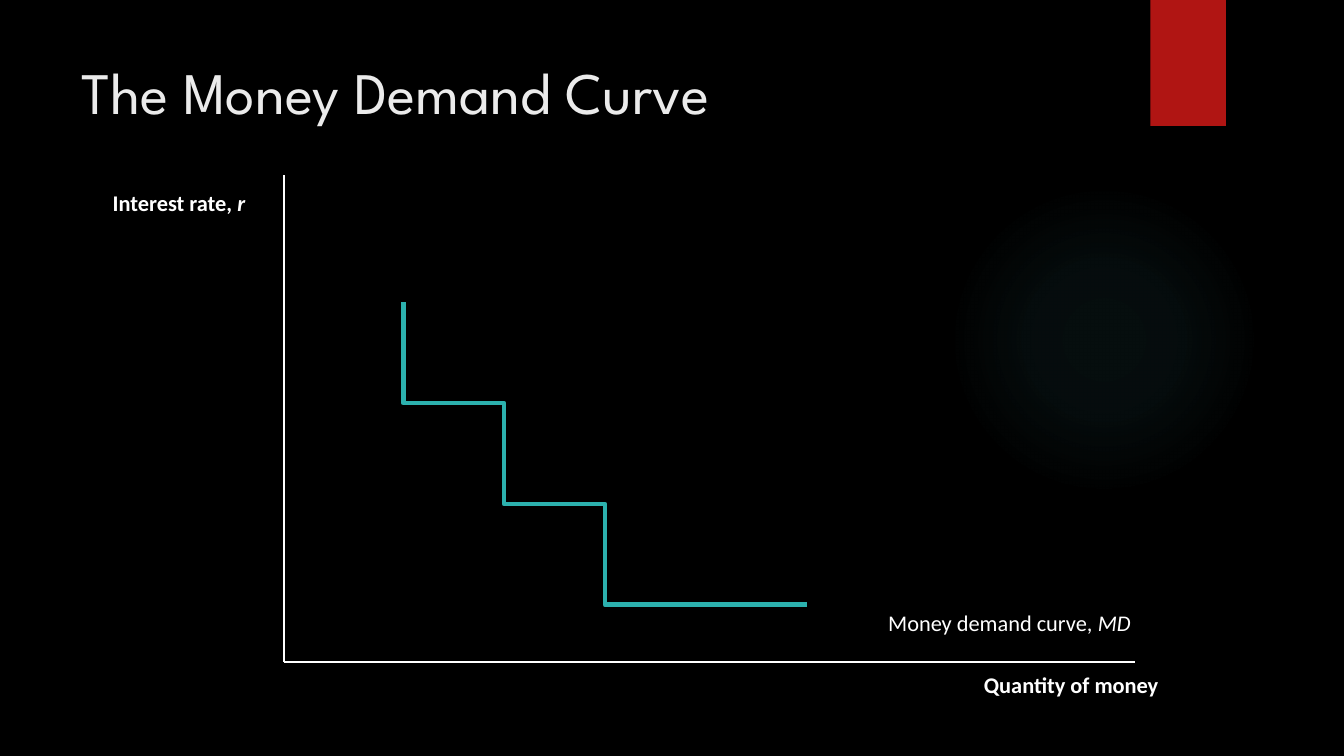
from dataclasses import dataclass

from lxml import etree
from pptx import Presentation
from pptx.dml.color import RGBColor
from pptx.enum.shapes import MSO_CONNECTOR, MSO_SHAPE
from pptx.enum.text import MSO_ANCHOR, PP_ALIGN
from pptx.oxml import parse_xml
from pptx.oxml.ns import nsdecls, qn
from pptx.slide import Slide
from pptx.util import Inches, Pt

LEFT, MID, RIGHT = PP_ALIGN.LEFT, PP_ALIGN.CENTER, PP_ALIGN.RIGHT
TOP = MSO_ANCHOR.TOP
LINE = MSO_CONNECTOR.STRAIGHT
OVAL, RECT = MSO_SHAPE.OVAL, MSO_SHAPE.RECTANGLE

BLACK = RGBColor(0x00, 0x00, 0x00)
WHITE = RGBColor(0xFF, 0xFF, 0xFF)
PALE = RGBColor(0xEB, 0xEB, 0xEB)
RED = RGBColor(0xB0, 0x15, 0x13)
TEAL = RGBColor(0x2C, 0xB1, 0xAE)
GLOW = RGBColor(0x50, 0xB9, 0xC1)

Point = tuple[float, float]


@dataclass
class Label:
    box: tuple[float, float, float, float]
    plain: str
    slant: str
    bold: bool
    align: PP_ALIGN


# Graph data, in inches
ORIGIN: Point = (2.82, 6.57)
AXIS_ENDS: list[Point] = [(2.82, 1.74), (11.26, 6.57)]
CURVE: list[Point] = [(8.31, 6.1), (6.17, 6.13), (4.26, 4.74), (3.63, 2.67)]
STEPS = 60
LABELS = [
    Label((0.79, 1.88, 1.97, 0.27), "Interest rate,", " r", True, MID),
    Label((8.71, 6.66, 2.78, 0.27), "Quantity of money", "", True, RIGHT),
    Label((8.81, 6.04, 2.44, 0.27), "Money demand curve, ", "MD", False, LEFT),
]


def add_glow(slide: Slide) -> None:
    """Draw a faint disc that fades out towards its rim."""
    disc = slide.shapes.add_shape(
        OVAL, Inches(9.41), Inches(1.83), Inches(3.08), Inches(3.08))
    disc.shadow.inherit = False
    disc.line.fill.background()
    stops = "".join(
        f'<a:gs pos="{pos}000"><a:srgbClr val="{GLOW}">'
        f'<a:alpha val="{alpha}000"/></a:srgbClr></a:gs>'
        for pos, alpha in [(0, 7), (36, 6), (69, 0)])
    fade = parse_xml(
        f'<a:gradFill {nsdecls("a")}><a:gsLst>{stops}</a:gsLst>'
        '<a:path path="circle"><a:fillToRect l="50000" t="50000" '
        'r="50000" b="50000"/></a:path></a:gradFill>')
    disc.element.spPr.find(qn("a:prstGeom")).addnext(fade)


def add_tab(slide: Slide) -> None:
    tab = slide.shapes.add_shape(
        RECT, Inches(11.41), 0, Inches(0.75), Inches(1.25))
    tab.shadow.inherit = False
    tab.fill.solid()
    tab.fill.fore_color.rgb = RED
    tab.line.fill.background()


def add_title(slide: Slide, text: str) -> None:
    title = slide.shapes.title
    title.left, title.top = Inches(0.71), Inches(0.5)
    title.width, title.height = Inches(10.29), Inches(1.53)
    frame = title.text_frame
    frame.text = text
    frame.vertical_anchor = TOP
    para = frame.paragraphs[0]
    para.alignment = LEFT
    font = para.runs[0].font
    font.name, font.size = "League Spartan", Pt(42)
    font.color.rgb = PALE


def add_curve(slide: Slide) -> None:
    """Trace the cubic curve through its four control points."""
    dots: list[Point] = []
    for step in range(STEPS + 1):
        t = step / STEPS
        parts = [(1 - t) ** 3, 3 * t * (1 - t) ** 2,
                 3 * t ** 2 * (1 - t), t ** 3]
        dots.append((sum(w * x for w, (x, _) in zip(parts, CURVE)),
                     sum(w * y for w, (_, y) in zip(parts, CURVE))))
    path = slide.shapes.build_freeform(*dots[0], scale=float(Inches(1)))
    path.add_line_segments(dots[1:], close=False)
    curve = path.convert_to_shape()
    curve.shadow.inherit = False
    curve.fill.background()
    curve.line.color.rgb = TEAL
    curve.line.width = Pt(3.25)


def add_axis(slide: Slide, end: Point) -> None:
    axis = slide.shapes.add_connector(
        LINE, *(Inches(v) for v in (*ORIGIN, *end)))
    axis.line.color.rgb = WHITE
    axis.line.width = Pt(1.5)
    etree.SubElement(axis.element.spPr, qn("a:effectLst"))


def add_label(slide: Slide, label: Label) -> None:
    box = slide.shapes.add_textbox(*(Inches(v) for v in label.box))
    frame = box.text_frame
    frame.word_wrap = True
    frame.margin_left = frame.margin_right = 0
    frame.margin_top = frame.margin_bottom = 0
    para = frame.paragraphs[0]
    para.alignment = label.align
    for text, slant in [(label.plain, False), (label.slant, True)]:
        if text:
            run = para.add_run()
            run.text = text
            run.font.name, run.font.size = "Calibri", Pt(16)
            run.font.bold, run.font.italic = label.bold, slant
            run.font.color.rgb = WHITE


def main() -> None:
    deck = Presentation()
    deck.slide_width, deck.slide_height = Inches(13.33), Inches(7.5)
    slide = deck.slides.add_slide(deck.slide_layouts[5])
    slide.background.fill.solid()
    slide.background.fill.fore_color.rgb = BLACK

    # Backdrop and title
    add_glow(slide)
    add_tab(slide)
    add_title(slide, "The Money Demand Curve")

    # Graph
    add_curve(slide)
    for end in AXIS_ENDS:
        add_axis(slide, end)
    for label in LABELS:
        add_label(slide, label)

    deck.save("out.pptx")


if __name__ == "__main__":
    main()
